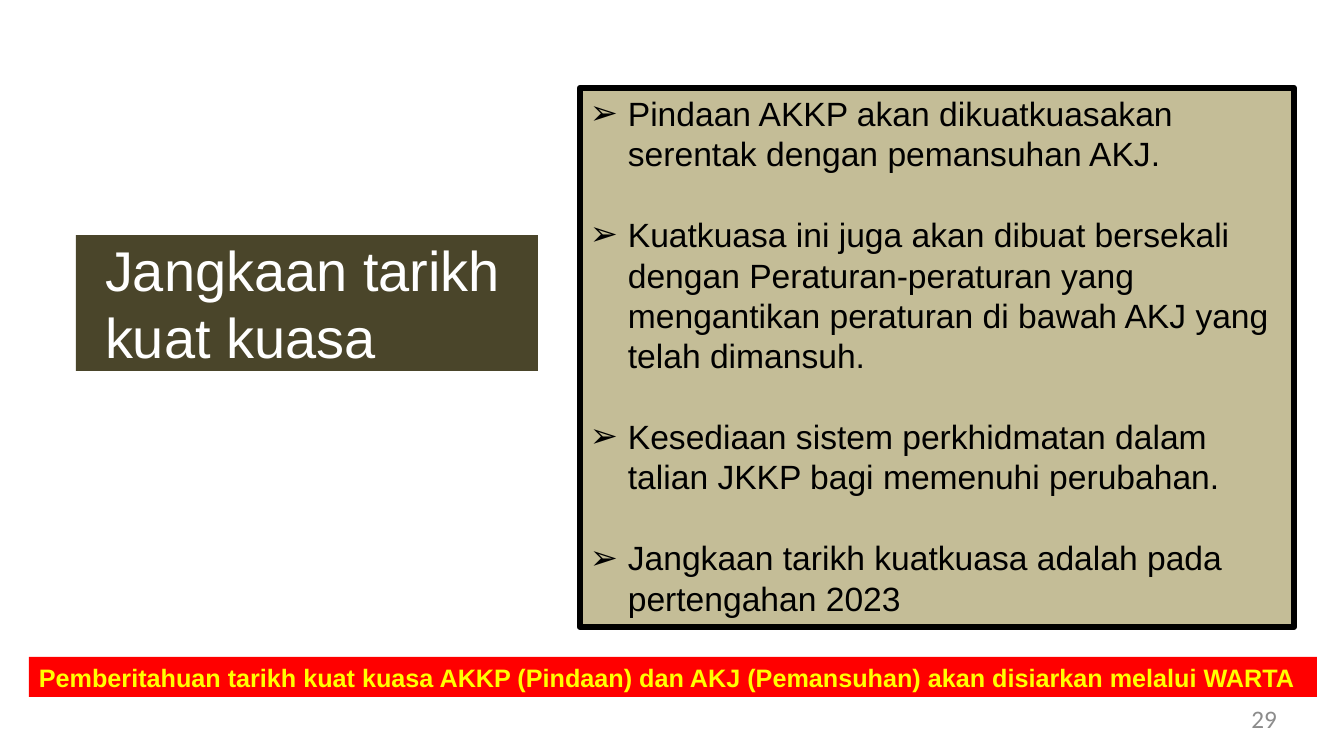
"""Build the slide on the expected enforcement date."""
import pptx
import pptx.util
import pptx.dml.color
import pptx.enum.shapes
import pptx.enum.text
import pptx.oxml
import pptx.oxml.ns

TITLE = "Jangkaan tarikh kuat kuasa"
POINTS = [
    "Pindaan AKKP akan dikuatkuasakan serentak dengan pemansuhan AKJ.",
    "Kuatkuasa ini juga akan dibuat bersekali dengan Peraturan-peraturan yang "
    "mengantikan peraturan di bawah AKJ yang telah dimansuh.",
    "Kesediaan sistem perkhidmatan dalam talian JKKP bagi memenuhi perubahan.",
    "Jangkaan tarikh kuatkuasa adalah pada pertengahan 2023",
]
NOTICE = ("Pemberitahuan tarikh kuat kuasa AKKP (Pindaan) dan AKJ (Pemansuhan) "
          "akan disiarkan melalui WARTA")
PAGE = "29"

BOXES = {
    "title": (76, 235, 462, 136),
    "points": (580, 88, 714, 539),
    "notice": (29, 657, 1288, 40),
    "page": (968, 703, 309, 30),
}
THEME = {
    "title": {"fill": "4A452A", "font": {"name": "Arial", "size": 40, "color": "FFFFFF"}},
    "points": {"fill": "C4BD97", "line": "000000",
               "font": {"name": "Arial", "size": 24, "color": "000000"}},
    "notice": {"fill": "FF0000",
               "font": {"name": "Arial", "size": 18, "color": "FFFF00", "bold": True}},
    "page": {"font": {"name": "Calibri", "size": 18, "color": "8C8C8C"}},
}
TITLE_INDENT, BULLET_INDENT = 29, 38
LINE_WIDTH, POINT_GAP = 4.5, 29
ALIGN = pptx.enum.text.PP_ALIGN
ANCHOR = pptx.enum.text.MSO_ANCHOR


def px(n):
    return pptx.util.Emu(round(n * 914400 / 100.8))


def rgb(color):
    return pptx.dml.color.RGBColor.from_string(color)


def place(sp, key):
    for name, n in zip(("left", "top", "width", "height"), BOXES[key]):
        setattr(sp, name, px(n))
    if "fill" in THEME[key]:
        sp.fill.solid()
        sp.fill.fore_color.rgb = rgb(THEME[key]["fill"])
    if "line" in THEME[key]:
        sp.line.color.rgb = rgb(THEME[key]["line"])
        sp.line.width = pptx.util.Pt(LINE_WIDTH)
    else:
        sp.line.fill.background()


def write(sp, key, texts, frame, para):
    tf = sp.text_frame
    for name, value in frame.items():
        setattr(tf, name, value)
    for i, text in enumerate(texts):
        p = tf.add_paragraph() if i else tf.paragraphs[0]
        for name, value in para.items():
            setattr(p, name, value)
        r = p.add_run()
        r.text = text
        font = dict(THEME[key]["font"])
        r.font.color.rgb = rgb(font.pop("color"))
        font["size"] = pptx.util.Pt(font["size"])
        for name, value in font.items():
            setattr(r.font, name, value)
    return tf.paragraphs


def indent(p, left, first, bullet=None):
    pPr = p._p.get_or_add_pPr()
    pPr.set("marL", str(px(left)))
    pPr.set("indent", str(px(first)))
    if bullet:
        for tag, name, value in (("buFont", "typeface", "Wingdings"), ("buChar", "char", bullet)):
            el = pptx.oxml.parse_xml(f"<a:{tag} {pptx.oxml.ns.nsdecls('a')}/>")
            el.set(name, value)
            if tag == "buFont":
                el.set(name, "Arial")
            pPr.append(el)


def main():
    prs = pptx.Presentation()
    prs.slide_width, prs.slide_height = px(1344), px(756)
    s = prs.slides.add_slide(prs.slide_layouts[5])
    flush = dict.fromkeys(("margin_left", "margin_top", "margin_right", "margin_bottom"), 0)
    rect = pptx.enum.shapes.MSO_SHAPE.RECTANGLE

    place(s.shapes.title, "title")
    frame = {**flush, "word_wrap": True, "vertical_anchor": ANCHOR.TOP}
    for p in write(s.shapes.title, "title", [TITLE], frame, {"alignment": ALIGN.LEFT}):
        indent(p, TITLE_INDENT, 0)

    sp = s.shapes.add_textbox(0, 0, 0, 0)
    place(sp, "page")
    write(sp, "page", [PAGE], {**flush, "word_wrap": True}, {"alignment": ALIGN.RIGHT})

    for key, texts, wrap in (("points", POINTS, True), ("notice", [NOTICE], False)):
        sp = s.shapes.add_shape(rect, 0, 0, 0, 0)
        sp.shadow.inherit = False
        place(sp, key)
        frame = {"word_wrap": wrap, "vertical_anchor": ANCHOR.TOP}
        paragraphs = write(sp, key, texts, frame, {"alignment": ALIGN.LEFT})
        if key == "points":
            for i, p in enumerate(paragraphs):
                p.space_before = pptx.util.Pt(POINT_GAP if i else 0)
                indent(p, BULLET_INDENT, -BULLET_INDENT, "➢")

    prs.save("out.pptx")


if __name__ == "__main__":
    main()
